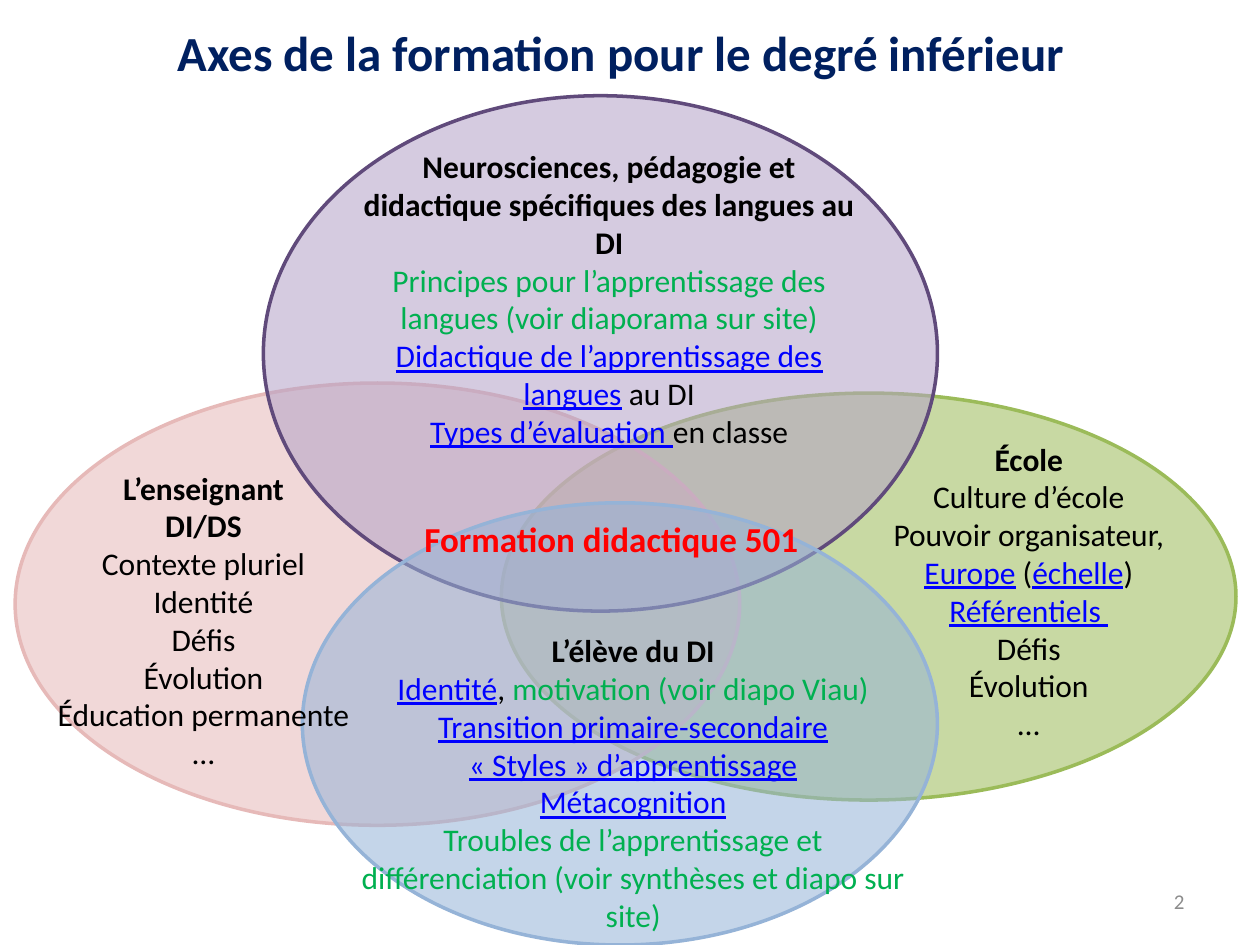
"""Build the slide on the training axes: four overlapping ellipses with their topics."""
from lxml.etree import SubElement
from pptx import Presentation
from pptx.dml.color import RGBColor
from pptx.enum.shapes import MSO_SHAPE
from pptx.enum.text import MSO_ANCHOR, PP_ALIGN
from pptx.oxml.ns import qn
from pptx.util import Inches, Pt

BLACK = RGBColor(0x00, 0x00, 0x00)
BLUE = RGBColor(0x00, 0x00, 0xFF)
GREEN = RGBColor(0x00, 0xB0, 0x50)
RED = RGBColor(0xFF, 0x00, 0x00)
NAVY = RGBColor(0x00, 0x20, 0x60)
GREY = RGBColor(0x8C, 0x8C, 0x8C)
OLIVE = RGBColor(0x9B, 0xBB, 0x59)
PINK = RGBColor(0xE6, 0xB9, 0xB8)
LILAC = RGBColor(0xB3, 0xA2, 0xC7)
PURPLE = RGBColor(0x60, 0x4A, 0x7B)
SKY = RGBColor(0x95, 0xB3, 0xD7)

FONT = "Calibri"
OPACITY = 55
STYLES = {
    "plain": (18, BLACK, False, False),
    "head": (18, BLACK, True, False),
    "link": (18, BLUE, False, True),
    "note": (18, GREEN, False, False),
    "centre": (20, RED, True, False),
    "title": (28, NAVY, True, False),
    "number": (12, GREY, False, False),
}

TITLE = [[("Axes de la formation pour le degré inférieur", "title")]]
NUMBER = [[("2", "number")]]
CENTRE = [[("Formation didactique 501", "centre")]]
SCHOOL = [
    [("École", "head")],
    [("Culture d’école", "plain")],
    [("Pouvoir organisateur,", "plain")],
    [("Europe", "link"), (" (", "plain"), ("échelle", "link"), (")", "plain")],
    [("Référentiels ", "link")],
    [("Défis", "plain")],
    [("Évolution", "plain")],
    [("…", "plain")],
]
SCIENCE = [
    [("Neurosciences, pédagogie et didactique spécifiques des langues au DI", "head")],
    [("Principes pour l’apprentissage des langues (voir diaporama sur site)", "note")],
    [("Didactique de l’apprentissage des langues", "link"), (" au DI", "plain")],
    [("Types d’évaluation ", "link"), ("en classe", "plain")],
]
PUPIL = [
    [("L’élève du DI", "head")],
    [("Identité", "link"), (", ", "plain"), ("motivation (voir diapo Viau)", "note")],
    [("Transition primaire-secondaire", "link")],
    [("« Styles » d’apprentissage", "link")],
    [("Métacognition", "link")],
    [("Troubles de l’apprentissage et différenciation (voir synthèses et diapo sur site)", "note")],
]
TEACHER = [
    [("L’enseignant", "head")],
    [("DI/DS", "head")],
    [("Contexte pluriel", "plain")],
    [("Identité", "plain")],
    [("Défis", "plain")],
    [("Évolution", "plain")],
    [("Éducation permanente", "plain")],
    [("…", "plain")],
]


def add_ellipse(slide, box, fill, line):
    shape = slide.shapes.add_shape(MSO_SHAPE.OVAL, *map(Inches, box))
    shape.shadow.inherit = False
    shape.fill.solid()
    shape.fill.fore_color.rgb = fill
    color = shape.fill._xPr.find(qn("a:solidFill"))[0]
    SubElement(color, qn("a:alpha"), val=str(OPACITY * 1000))
    shape.line.color.rgb = line
    shape.line.width = Pt(2)


def add_text(slide, box, lines, align=PP_ALIGN.CENTER, anchor=MSO_ANCHOR.TOP):
    text_frame = slide.shapes.add_textbox(*map(Inches, box)).text_frame
    text_frame.word_wrap = True
    text_frame.vertical_anchor = anchor
    for index, pieces in enumerate(lines):
        paragraph = text_frame.add_paragraph() if index else text_frame.paragraphs[0]
        paragraph.alignment = align
        for text, style in pieces:
            run = paragraph.add_run()
            run.text = text
            size, color, bold, underline = STYLES[style]
            run.font.name = FONT
            run.font.size = Pt(size)
            run.font.color.rgb = color
            run.font.bold = bold
            run.font.underline = underline


def main():
    presentation = Presentation()
    presentation.slide_width, presentation.slide_height = Inches(10), Inches(7.5)
    slide = presentation.slides.add_slide(presentation.slide_layouts[6])

    add_text(slide, (1.1, -0.08, 7.65, 0.99), TITLE, anchor=MSO_ANCHOR.MIDDLE)
    add_text(slide, (7.17, 6.95, 2.33, 0.4), NUMBER, PP_ALIGN.RIGHT, MSO_ANCHOR.MIDDLE)
    add_ellipse(slide, (3.98, 3.12, 5.83, 3.23), OLIVE, OLIVE)
    add_text(slide, (6.57, 3.44, 3.19, 2.52), SCHOOL)
    add_ellipse(slide, (0.12, 3.04, 5.75, 3.51), PINK, PINK)
    add_ellipse(slide, (2.09, 0.76, 5.35, 4.09), LILAC, PURPLE)
    add_ellipse(slide, (2.4, 3.99, 5.04, 3.51), SKY, SKY)
    add_text(slide, (2.75, 1.12, 4.17, 2.83), SCIENCE)
    add_text(slide, (2.72, 4.96, 4.61, 2.52), PUPIL)
    add_text(slide, (3.27, 4.06, 3.22, 0.44), CENTRE, PP_ALIGN.LEFT)
    add_text(slide, (0.12, 3.67, 2.99, 2.52), TEACHER)

    presentation.save("out.pptx")


if __name__ == "__main__":
    main()
